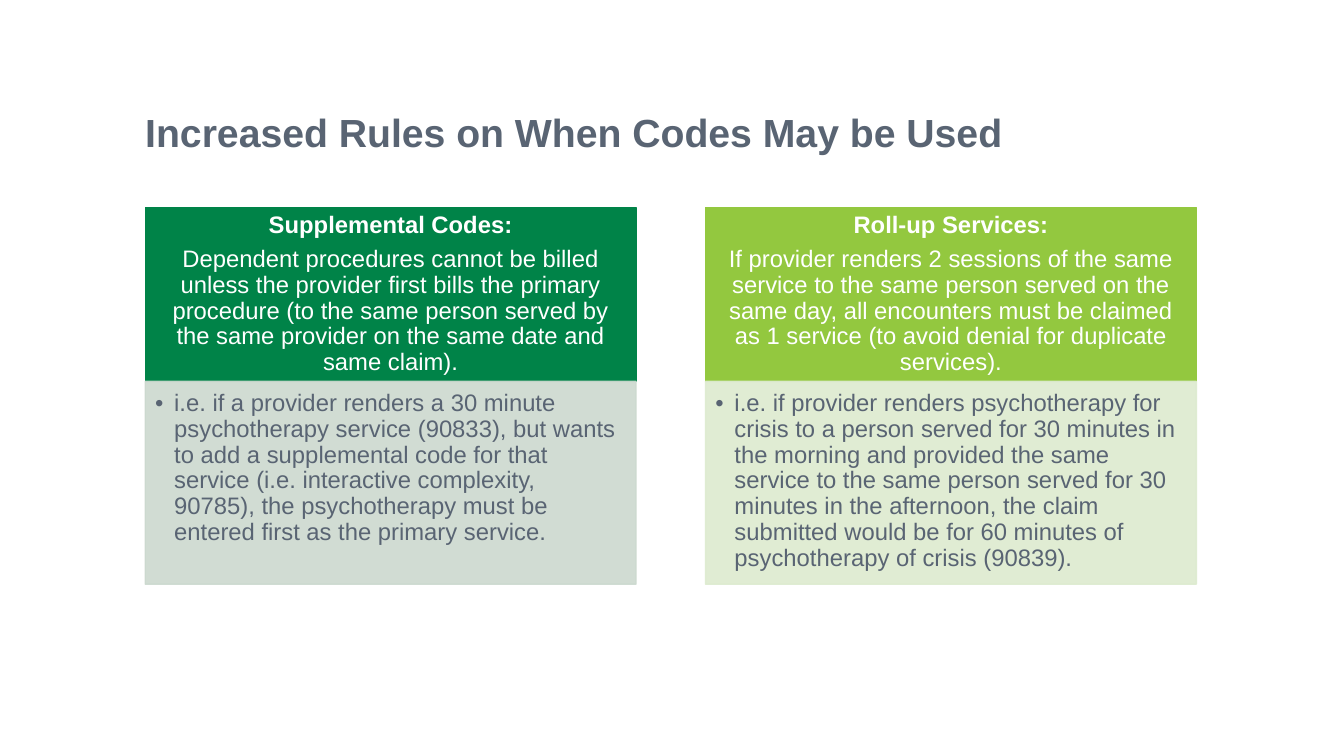
from dataclasses import dataclass

from lxml import etree
from pptx import Presentation
from pptx import util as u
from pptx.dml.color import RGBColor
from pptx.enum import text as t
from pptx.oxml.ns import qn

HUES = {
    "ink": "596473",
    "white": "FFFFFF",
    "green": "008348",
    "mist": "CCD9CF",
    "lime": "93C83F",
    "pale": "DDEBCF",
}
LEFT, STEP, WIDE = 3.66, 14.12, 12.37
TOP, HEAD, BODY = 5.23, 4.38, 5.11
HANG = 0.48


@dataclass
class Rule:
    name: str
    text: str
    case: str
    dark: str
    light: str


RULES = [
    Rule(
        "Supplemental Codes:",
        "Dependent procedures cannot be billed unless the provider first bills "
        "the primary procedure (to the same person served by the same provider "
        "on the same date and same claim).",
        "i.e. if a provider renders a 30 minute psychotherapy service (90833), "
        "but wants to add a supplemental code for that service (i.e. interactive "
        "complexity, 90785), the psychotherapy must be entered first as the "
        "primary service.",
        "green", "mist",
    ),
    Rule(
        "Roll-up Services:",
        "If provider renders 2 sessions of the same service to the same person "
        "served on the same day, all encounters must be claimed as 1 service "
        "(to avoid denial for duplicate services).",
        "i.e. if provider renders psychotherapy for crisis to a person served for "
        "30 minutes in the morning and provided the same service to the same "
        "person served for 30 minutes in the afternoon, the claim submitted would "
        "be for 60 minutes of psychotherapy of crisis (90839).",
        "lime", "pale",
    ),
]


def tone(hue: str) -> RGBColor:
    return RGBColor.from_string(HUES[hue])


def place(box, spot: tuple, pads: tuple, anchor) -> None:
    """Move a placeholder and set up its text frame."""
    box.left, box.top, box.width, box.height = map(u.Cm, spot)
    frame = box.text_frame
    frame.word_wrap = True
    frame.auto_size = t.MSO_AUTO_SIZE.NONE
    frame.vertical_anchor = anchor
    (frame.margin_left, frame.margin_top,
     frame.margin_right, frame.margin_bottom) = map(u.Cm, pads)


def paint(box, hue: str, alpha: int = 100) -> None:
    """Give a placeholder a fill and a line of one colour."""
    box.fill.solid()
    box.fill.fore_color.rgb = tone(hue)
    box.line.color.rgb = tone(hue)
    box.line.width = u.Pt(1)
    if alpha < 100:
        for clr in box._element.spPr.iter(qn("a:srgbClr")):
            etree.SubElement(clr, qn("a:alpha")).set("val", str(alpha * 1000))


def write(para, words: str, size: int, hue: str, bold: bool = False,
          align=t.PP_ALIGN.LEFT, after: float = 0, dot: bool = False) -> None:
    """Fill one paragraph with one run."""
    props = para._p.get_or_add_pPr()
    hang = u.Cm(HANG) if dot else 0
    props.set("marL", str(hang))
    props.set("indent", str(-hang))
    if dot:
        etree.SubElement(props, qn("a:buChar")).set("char", "•")
    else:
        etree.SubElement(props, qn("a:buNone"))
    para.alignment = align
    para.line_spacing = 0.9
    para.space_before = u.Pt(0)
    para.space_after = u.Pt(after)
    run = para.add_run()
    run.text = words
    run.font.name = "Arial"
    run.font.size = u.Pt(size)
    run.font.bold = bold
    run.font.color.rgb = tone(hue)


def draw(rule: Rule, col: int, head, body) -> None:
    """Draw one column: the rule above, its example below."""
    left = LEFT + col * STEP
    place(head, (left, TOP, WIDE, HEAD), (0.33, 0.2, 0.33, 0.2),
          t.MSO_ANCHOR.MIDDLE)
    paint(head, rule.dark)
    frame = head.text_frame
    mid = t.PP_ALIGN.CENTER
    write(frame.paragraphs[0], rule.name, 17, "white", True, mid, 6)
    write(frame.add_paragraph(), rule.text, 17, "white", False, mid, 6)

    place(body, (left, TOP + HEAD, WIDE, BODY), (0.25, 0.25, 0.33, 0.38),
          t.MSO_ANCHOR.TOP)
    paint(body, rule.light, 90)
    write(body.text_frame.paragraphs[0], rule.case, 17, "ink", after=2.5, dot=True)


def main() -> None:
    deck = Presentation()
    deck.slide_width, deck.slide_height = u.Cm(33.87), u.Cm(19.05)
    # The comparison layout holds a title, two heads and two bodies
    slide = deck.slides.add_slide(deck.slide_layouts[4])
    slots = {s.placeholder_format.idx: s for s in slide.placeholders}

    # Title
    place(slots[0], (LEFT, 1.02, 26.47, 2.9), (0, 0, 0, 0), t.MSO_ANCHOR.BOTTOM)
    write(slots[0].text_frame.paragraphs[0],
          "Increased Rules on When Codes May be Used", 28, "ink", True)

    # Columns
    for col, rule in enumerate(RULES):
        draw(rule, col, slots[1 + 2 * col], slots[2 + 2 * col])

    deck.save("out.pptx")


if __name__ == "__main__":
    main()
